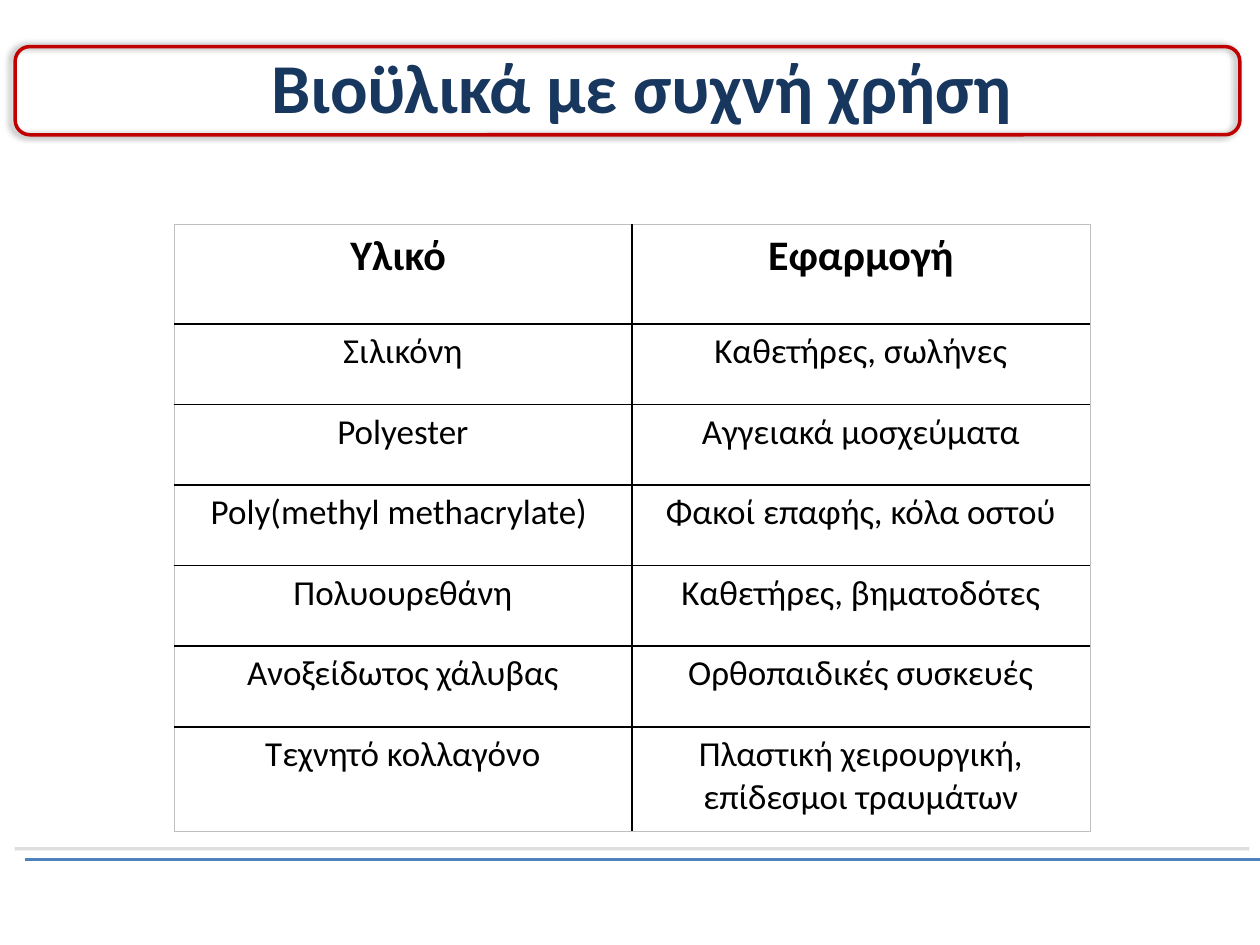
from dataclasses import dataclass

from lxml import etree
from pptx import Presentation
from pptx import util as u
from pptx.dml.color import RGBColor
from pptx.enum import shapes, text
from pptx.oxml import ns


@dataclass(frozen=True)
class Theme:
    font: str = "Calibri"
    title: str = "17375E"
    ink: str = "000000"
    frame: str = "C00000"
    rule: str = "4F81BD"
    rule_shadow: str = "BFBFBF"
    table_edge: str = "BFBFBF"
    title_size: int = 40
    header_size: int = 24
    body_size: int = 20


THEME = Theme()

MATERIALS = [
    ("Υλικό ", "Εφαρμογή"),
    ("Σιλικόνη", "Καθετήρες, σωλήνες"),
    ("Polyester", "Αγγειακά μοσχεύματα"),
    ("Poly(methyl methacrylate) ", "Φακοί επαφής, κόλα οστού"),
    ("Πολυουρεθάνη", "Καθετήρες, βηματοδότες"),
    ("Ανοξείδωτος χάλυβας", "Ορθοπαιδικές συσκευές"),
    ("Τεχνητό κολλαγόνο", "Πλαστική χειρουργική, επίδεσμοι τραυμάτων"),
]
ROW_HEIGHTS = [0.79] + [0.64] * 5 + [0.83]
COLUMN_WIDTH = 3.635


def rgb(color):
    return RGBColor.from_string(color)


def add_child(parent, tag, **attributes):
    child = etree.SubElement(parent, ns.qn(tag))
    for name, value in attributes.items():
        child.set(name, str(value))
    return child


def add_shadow(properties, color, opacity, blur, distance, angle):
    """Give the shape an outer shadow; lengths in points, angle in degrees."""
    effects = properties.find(ns.qn("a:effectLst"))
    if effects is None:
        effects = add_child(properties, "a:effectLst")
    shadow = add_child(effects, "a:outerShdw", blurRad=int(u.Pt(blur)),
                       dist=int(u.Pt(distance)), dir=angle * 60000,
                       algn="ctr", rotWithShape=0)
    tint = add_child(shadow, "a:srgbClr", val=color)
    add_child(tint, "a:alpha", val=opacity * 1000)


def write_centred(frame, words, size, color, bold=False):
    paragraph = frame.paragraphs[0]
    paragraph.alignment = text.PP_ALIGN.CENTER
    run = paragraph.add_run()
    run.text = words
    run.font.name = THEME.font
    run.font.size = u.Pt(size)
    run.font.bold = bold
    run.font.color.rgb = rgb(color)


def add_footer_rule(slide):
    rule = slide.shapes.add_connector(
        shapes.MSO_CONNECTOR.STRAIGHT,
        u.Inches(0.2), u.Inches(6.82), u.Inches(10), u.Inches(6.82))
    rule.line.color.rgb = rgb(THEME.rule)
    rule.line.width = u.Pt(1.75)
    add_shadow(rule._element.spPr, THEME.rule_shadow, 50, 0, 8.5, 225)


def add_title(slide, words):
    title = slide.shapes.add_textbox(
        u.Inches(1.3), u.Inches(0.3), u.Inches(7.58), u.Inches(0.77))
    title.text_frame.word_wrap = True
    title.text_frame.auto_size = text.MSO_AUTO_SIZE.SHAPE_TO_FIT_TEXT
    write_centred(title.text_frame, words, THEME.title_size, THEME.title, True)


def add_title_frame(slide):
    frame = slide.shapes.add_shape(
        shapes.MSO_SHAPE.ROUNDED_RECTANGLE,
        u.Inches(0.12), u.Inches(0.37), u.Inches(9.72), u.Inches(0.7))
    frame.fill.background()
    frame.line.color.rgb = rgb(THEME.frame)
    frame.line.width = u.Pt(2)
    frame.shadow.inherit = False
    add_shadow(frame._element.spPr, THEME.ink, 40, 4, 3, 180)


def set_borders(cell, outer_sides):
    """Draw black inner borders and a grey hairline on the table's edge."""
    properties = cell._tc.get_or_add_tcPr()
    for side, is_outer in outer_sides.items():
        width, color = (0.25, THEME.table_edge) if is_outer else (1, THEME.ink)
        line = add_child(properties, f"a:ln{side}", w=int(u.Pt(width)))
        add_child(add_child(line, "a:solidFill"), "a:srgbClr", val=color)


def add_materials_table(slide):
    row_count, column_count = len(MATERIALS), len(MATERIALS[0])
    table = slide.shapes.add_table(
        row_count, column_count, u.Inches(1.38), u.Inches(1.78),
        u.Inches(COLUMN_WIDTH * column_count), u.Inches(sum(ROW_HEIGHTS))).table
    table.first_row = table.horz_banding = False
    for column in table.columns:
        column.width = u.Inches(COLUMN_WIDTH)
    for r, (row, height) in enumerate(zip(MATERIALS, ROW_HEIGHTS)):
        table.rows[r].height = u.Inches(height)
        is_header = r == 0
        size = THEME.header_size if is_header else THEME.body_size
        for c, words in enumerate(row):
            cell = table.cell(r, c)
            set_borders(cell, {"L": c == 0, "R": c == column_count - 1,
                               "T": is_header, "B": r == row_count - 1})
            cell.fill.background()
            write_centred(cell.text_frame, words, size, THEME.ink, is_header)


def main():
    deck = Presentation()
    deck.slide_width, deck.slide_height = u.Inches(10), u.Inches(7.5)
    slide = deck.slides.add_slide(deck.slide_layouts[6])
    add_footer_rule(slide)
    add_title(slide, "Βιοϋλικά με συχνή χρήση")
    add_materials_table(slide)
    add_title_frame(slide)
    deck.save("out.pptx")


if __name__ == "__main__":
    main()
